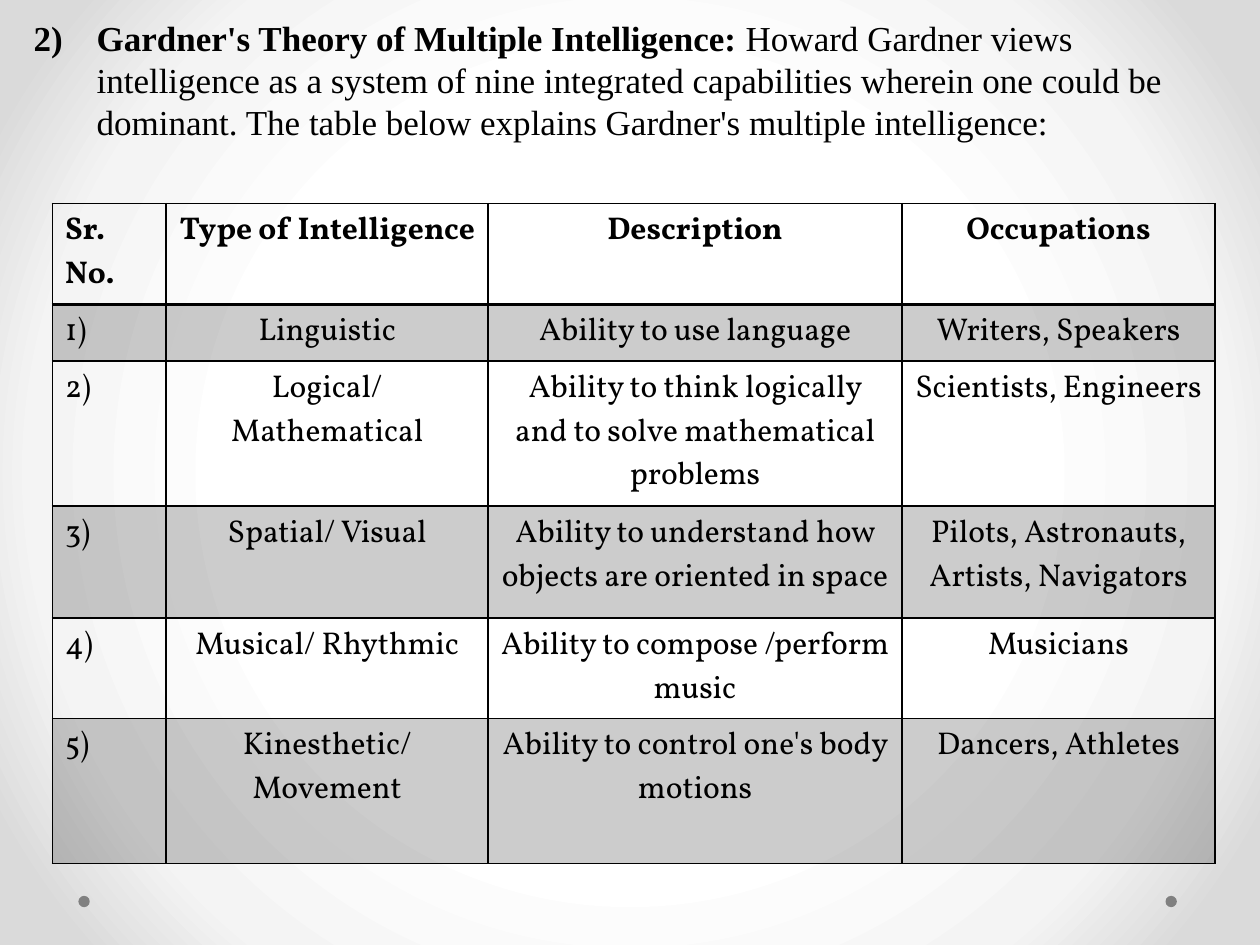
from dataclasses import dataclass
from lxml import etree
from pptx import Presentation
from pptx.dml.color import RGBColor
from pptx.enum.shapes import MSO_SHAPE
from pptx.enum.text import MSO_AUTO_SIZE, PP_ALIGN
from pptx.oxml.ns import qn
from pptx.util import Pt

OVAL = MSO_SHAPE.OVAL
LEFT, CENTER = PP_ALIGN.LEFT, PP_ALIGN.CENTER
NO_FIT = MSO_AUTO_SIZE.NONE


@dataclass(frozen=True)
class Theme:
    ink: str = "000000"
    dot: str = "808080"
    backdrop: tuple = ((50, "FFFFFF"), (76, "F4F4F4"), (92, "DADADA"))
    band_opacity: int = 20
    intro_font: str = "Times New Roman"
    table_font: str = "Vollkorn"
    intro_size: int = 20
    table_size: int = 18


theme = Theme()


def add_xml(parent, tag, **attributes):
    return etree.SubElement(parent, qn(tag), {key: str(value) for key, value in attributes.items()})


def add_span(para, text, font, size, bold):
    span = para.add_run()
    span.text = text
    span.font.name, span.font.size, span.font.bold = font, Pt(size), bold
    span.font.color.rgb = RGBColor.from_string(theme.ink)


deck = Presentation()
deck.slide_width, deck.slide_height = Pt(720), Pt(540)
page = deck.slides.add_slide(deck.slide_layouts[1])
title = page.shapes.title
title.element.getparent().remove(title.element)

# Radial background
page.background.fill.gradient()
gradient = page.element.find(".//" + qn("a:gradFill"))
for child in list(gradient):
    gradient.remove(child)
stops = add_xml(gradient, "a:gsLst")
for position, color in theme.backdrop:
    stop = add_xml(stops, "a:gs", pos=position * 1000)
    add_xml(stop, "a:srgbClr", val=color)
circle = add_xml(gradient, "a:path", path="circle")
add_xml(circle, "a:fillToRect", l=50000, t=50000, r=50000, b=50000)

# Numbered introduction
intro = page.placeholders[1]
intro.left, intro.top, intro.width, intro.height = Pt(12), Pt(6), Pt(672), Pt(456)
intro.text_frame.auto_size = NO_FIT
para = intro.text_frame.paragraphs[0]
para.space_before = Pt(4)
add_span(para, "Gardner's Theory of Multiple Intelligence: ", theme.intro_font, theme.intro_size, True)
add_span(para, "Howard Gardner views intelligence as a system of nine integrated capabilities "
         "wherein one could be dominant. The table below explains Gardner's multiple intelligence:",
         theme.intro_font, theme.intro_size, False)
numbering = para._p.get_or_add_pPr()
numbering.set("marL", str(Pt(36)))
numbering.set("indent", str(Pt(-36)))
add_xml(numbering, "a:buFont", typeface=theme.intro_font)
add_xml(numbering, "a:buAutoNum", type="arabicParenR", startAt=2)

# Footer dots
for left in (44.8, 666):
    dot = page.shapes.add_shape(OVAL, Pt(left), Pt(511.9), Pt(6.5), Pt(6.5))
    dot.shadow.inherit = False
    dot.fill.solid()
    dot.fill.fore_color.rgb = RGBColor.from_string(theme.dot)
    dot.line.fill.background()

# Table of intelligences
rows = [
    ("Sr. No.", "Type of Intelligence", "Description", "Occupations"),
    ("1)", "Linguistic", "Ability to use language", "Writers, Speakers"),
    ("2)", "Logical/ Mathematical",
     "Ability to think logically and to solve mathematical problems", "Scientists, Engineers"),
    ("3)", "Spatial/ Visual", "Ability to understand how objects are oriented in space",
     "Pilots, Astronauts, Artists, Navigators"),
    ("4)", "Musical/ Rhythmic", "Ability to compose /perform music", "Musicians"),
    ("5)", "Kinesthetic/ Movement", "Ability to control one's body motions", "Dancers, Athletes"),
]
widths = (65, 184, 236.4, 179)
heights = (57.5, 32, 83, 64, 57, 83)
table = page.shapes.add_table(len(rows), len(widths), Pt(30), Pt(116.4),
                              Pt(sum(widths)), Pt(sum(heights))).table
table.first_row = table.horz_banding = False
for column, width in zip(table.columns, widths):
    column.width = Pt(width)
for row, height in zip(table.rows, heights):
    row.height = Pt(height)

for r, texts in enumerate(rows):
    for c, text in enumerate(texts):
        cell = table.cell(r, c)
        para = cell.text_frame.paragraphs[0]
        para.alignment = CENTER if c else LEFT
        add_span(para, text, theme.table_font, theme.table_size, r == 0)

        # Borders, heavier below the header
        properties = cell._tc.get_or_add_tcPr()
        for side in ("L", "R", "T", "B"):
            heavy = (r, side) in ((0, "B"), (1, "T"))
            border = add_xml(properties, "a:ln" + side, w=Pt(2 if heavy else 1))
            add_xml(add_xml(border, "a:solidFill"), "a:srgbClr", val=theme.ink)

        # Translucent band on odd rows
        if r % 2:
            band = add_xml(add_xml(properties, "a:solidFill"), "a:srgbClr", val=theme.ink)
            add_xml(band, "a:alpha", val=theme.band_opacity * 1000)
        else:
            cell.fill.background()

deck.save("out.pptx")
